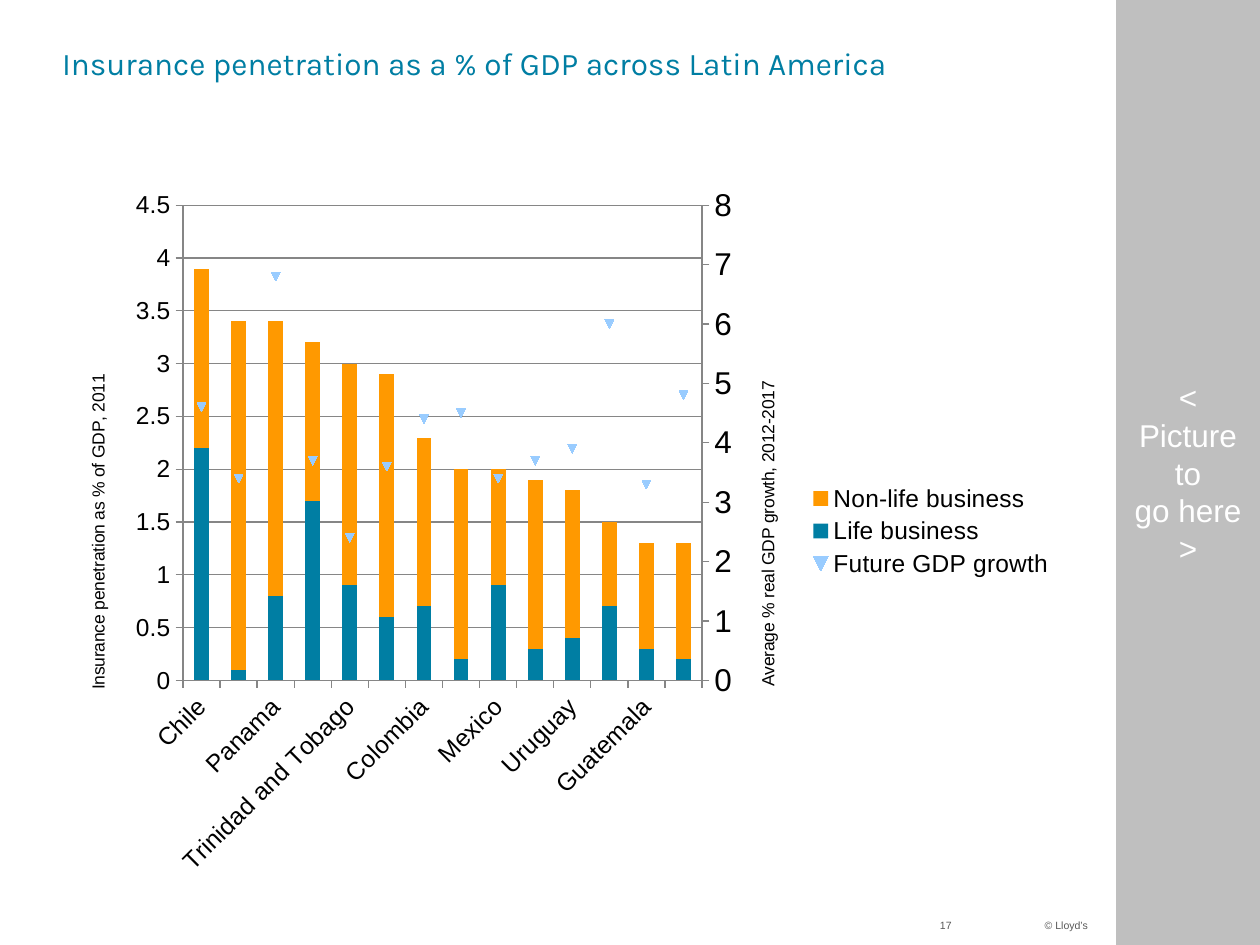
from copy import deepcopy
from dataclasses import dataclass

from pptx import Presentation
from pptx.chart.axis import ValueAxis
from pptx.chart.data import CategoryChartData
from pptx.dml.color import RGBColor
from pptx.enum.chart import XL_CHART_TYPE as ChartType, XL_LEGEND_POSITION as LegendPos
from pptx.enum.chart import XL_MARKER_STYLE as Marker, XL_TICK_MARK as Tick
from pptx.enum.shapes import MSO_SHAPE as Shape
from pptx.enum.text import MSO_ANCHOR as Anchor, MSO_AUTO_SIZE as AutoSize, PP_ALIGN as Align
from pptx.oxml import parse_xml
from pptx.oxml.ns import nsdecls, qn
from pptx.util import Cm, Pt

COUNTRIES = ["Chile", "Venezuela", "Panama", "Brazil", "Trinidad and Tobago",
             "Argentina", "Colombia", "Costa Rica", "Mexico", "Ecuador",
             "Uruguay", "Peru", "Guatemala", "Dominican Republic"]
LIFE = [2.2, 0.1, 0.8, 1.7, 0.9, 0.6, 0.7, 0.2, 0.9, 0.3, 0.4, 0.7, 0.3, 0.2]
NON_LIFE = [1.7, 3.3, 2.6, 1.5, 2.1, 2.3, 1.6, 1.8, 1.1, 1.6, 1.4, 0.8, 1, 1.1]
GROWTH = [4.6, 3.4, 6.8, 3.7, 2.4, 3.6, 4.4, 4.5, 3.4, 3.7, 3.9, 6, 3.3, 4.8]


@dataclass(frozen=True)
class Theme:
    heading_font: str = "Karla"
    body_font: str = "Arial"
    teal: str = "007EA3"
    orange: str = "FF9900"
    sky: str = "99CCFF"
    panel: str = "BFBFBF"
    white: str = "FFFFFF"
    black: str = "000000"
    footer: str = "595959"
    grid: str = "868686"
    large: int = 18
    label: int = 14
    axis_title: int = 10
    small: int = 6


def apply(target, values):
    for name, value in values.items():
        setattr(target, name, value)


def paint(fill, color):
    fill.solid()
    fill.fore_color.rgb = RGBColor.from_string(color)


def place(element, **percent):
    """Give a chart part a manual layout, in percent of the chart area."""
    old = element.find(qn("c:layout"))
    if old is not None:
        element.remove(old)
    inner = '<c:layoutTarget val="inner"/>' if "w" in percent else ""
    values = "".join(f'<c:{side} val="{share / 100:.4f}"/>' for side, share in percent.items())
    layout = parse_xml(
        f'<c:layout {nsdecls("c")}><c:manualLayout>{inner}<c:xMode val="edge"/>'
        f'<c:yMode val="edge"/>{values}</c:manualLayout></c:layout>')
    for tag in ("c:tx", "c:legendPos"):
        before = element.find(qn(tag))
        if before is not None:
            before.addnext(layout)
            return
    element.insert(0, layout)


def move_last_series_to_right_axis(chart):
    """Turn the last column series into a line plot; return its value axis."""
    plot_area = chart._chartSpace.chart.plotArea
    columns = plot_area.find(qn("c:barChart"))
    series = columns.findall(qn("c:ser"))[-1]
    for flag in series.findall(qn("c:invertIfNegative")):
        series.remove(flag)
    line = parse_xml(
        f'<c:lineChart {nsdecls("c")}><c:grouping val="standard"/>'
        '<c:varyColors val="0"/><c:marker val="1"/>'
        '<c:axId val="5001"/><c:axId val="5002"/></c:lineChart>')
    line.insert(2, series)
    columns.addnext(line)

    left = plot_area.find(qn("c:valAx"))
    right, hidden = deepcopy(left), deepcopy(plot_area.find(qn("c:catAx")))
    for axis, own, other in ((hidden, "5001", "5002"), (right, "5002", "5001")):
        axis.find(qn("c:axId")).set("val", own)
        axis.find(qn("c:crossAx")).set("val", other)
    hidden.find(qn("c:delete")).set("val", "1")
    right.find(qn("c:axPos")).set("val", "r")
    right.find(qn("c:crosses")).set("val", "max")
    left.addnext(right)
    right.addnext(hidden)
    return ValueAxis(right)


class SlideBuilder:
    def __init__(self, slide, theme):
        self.slide = slide
        self.theme = theme

    def font(self, font, size, color, name=None):
        apply(font, {"name": name or self.theme.body_font, "size": Pt(size), "bold": False})
        font.color.rgb = RGBColor.from_string(color)

    def title(self, text, box):
        heading = self.slide.shapes.title
        apply(heading, dict(zip(("left", "top", "width", "height"), map(Cm, box))))
        paint(heading.fill, self.theme.white)
        frame = heading.text_frame
        frame.text = text
        apply(frame, {"margin_left": 0, "margin_right": 0, "margin_top": Cm(0.12),
                      "margin_bottom": 0, "vertical_anchor": Anchor.TOP,
                      "auto_size": AutoSize.NONE, "word_wrap": True})
        apply(frame.paragraphs[0], {"alignment": Align.LEFT, "line_spacing": 0.8})
        self.font(frame.paragraphs[0].runs[0].font, self.theme.large,
                  self.theme.teal, self.theme.heading_font)

    def panel(self, text, box):
        panel = self.slide.shapes.add_shape(Shape.RECTANGLE, *map(Cm, box))
        panel.shadow.inherit = False
        paint(panel.fill, self.theme.panel)
        panel.line.fill.background()
        frame = panel.text_frame
        frame.text = text
        apply(frame, {"word_wrap": True, "vertical_anchor": Anchor.MIDDLE})
        frame.paragraphs[0].alignment = Align.CENTER
        for run in frame.paragraphs[0].runs:
            self.font(run.font, self.theme.large, self.theme.white)

    def footer(self, text, box, align):
        frame = self.slide.shapes.add_textbox(*map(Cm, box)).text_frame
        frame.text = text
        apply(frame, {"word_wrap": True, "margin_left": 0, "margin_right": 0,
                      "margin_top": 0, "margin_bottom": 0})
        frame.paragraphs[0].alignment = align
        self.font(frame.paragraphs[0].runs[0].font, self.theme.small, self.theme.footer)

    def axis(self, axis, size, scale=None):
        apply(axis, {"major_tick_mark": Tick.OUTSIDE, "minor_tick_mark": Tick.NONE,
                     **(scale or {})})
        paint(axis.format.line.fill, self.theme.grid)
        axis.format.line.width = Pt(0.75)
        self.font(axis.tick_labels.font, size, self.theme.black)

    def axis_title(self, axis, text, x, y):
        frame = axis.axis_title.text_frame
        frame.text = text
        frame._txBody.bodyPr.set("rot", "-5400000")
        self.font(frame.paragraphs[0].runs[0].font, self.theme.axis_title, self.theme.black)
        place(axis.axis_title._element, x=x, y=y)

    def penetration_chart(self, box):
        theme = self.theme
        data = CategoryChartData()
        data.categories = COUNTRIES
        for name, values in (("Life business", LIFE), ("Non-life business", NON_LIFE),
                             ("Future GDP growth", GROWTH)):
            data.add_series(name, values)
        chart = self.slide.shapes.add_chart(
            ChartType.COLUMN_STACKED, *map(Cm, box), data).chart
        apply(chart, {"has_title": False, "has_legend": True})
        self.font(chart.font, theme.large, theme.black)
        left_axis = chart.value_axis
        right_axis = move_last_series_to_right_axis(chart)
        columns, growth = chart.plots
        apply(columns, {"gap_width": 150, "overlap": 100, "vary_by_categories": False})
        for series, color in zip(columns.series, (theme.teal, theme.orange)):
            paint(series.format.fill, color)

        markers = growth.series[0]
        markers.smooth = False
        markers.format.line.fill.background()
        apply(markers.marker, {"style": Marker.AUTOMATIC, "size": 5})
        paint(markers.marker.format.fill, theme.sky)
        markers.marker.format.line.fill.background()

        self.axis(chart.category_axis, theme.label)
        chart.category_axis._element.find(qn("c:txPr")).find(qn("a:bodyPr")).set("rot", "-2700000")
        self.axis(left_axis, theme.label, {"minimum_scale": 0, "maximum_scale": 4.5,
                                           "major_unit": 0.5, "has_major_gridlines": True})
        paint(left_axis.major_gridlines.format.line.fill, theme.grid)
        self.axis(right_axis, theme.large, {"minimum_scale": 0, "maximum_scale": 8,
                                            "major_unit": 1, "has_major_gridlines": False})
        self.axis_title(left_axis, "Insurance penetration as % of GDP, 2011", 2.2, 27.5)
        self.axis_title(right_axis, "Average % real GDP growth, 2012-2017", 68.9, 28.5)

        apply(chart.legend, {"position": LegendPos.RIGHT, "include_in_layout": False})
        self.font(chart.legend.font, theme.label, theme.black)
        place(chart.legend._element, x=74.1, y=42.7)
        place(chart._chartSpace.chart.plotArea, x=12.1, y=4.35, w=51.7, h=66.4)


def main():
    deck = Presentation()
    apply(deck, {"slide_width": Cm(25.4), "slide_height": Cm(19.05)})
    builder = SlideBuilder(deck.slides.add_slide(deck.slide_layouts[5]), Theme())
    builder.title("Insurance penetration as a % of GDP across Latin America",
                  (1.25, 0.91, 20.75, 2.21))
    builder.panel("< Picture to\vgo here >", (22.5, 0, 2.9, 19.05))
    builder.penetration_chart((1.24, 3.51, 20.24, 14.43))
    builder.footer("17", (18.95, 18.52, 1, 0.5), Align.LEFT)
    builder.footer("© Lloyd’s", (19, 18.52, 2.93, 0.33), Align.RIGHT)
    deck.save("out.pptx")


if __name__ == "__main__":
    main()
